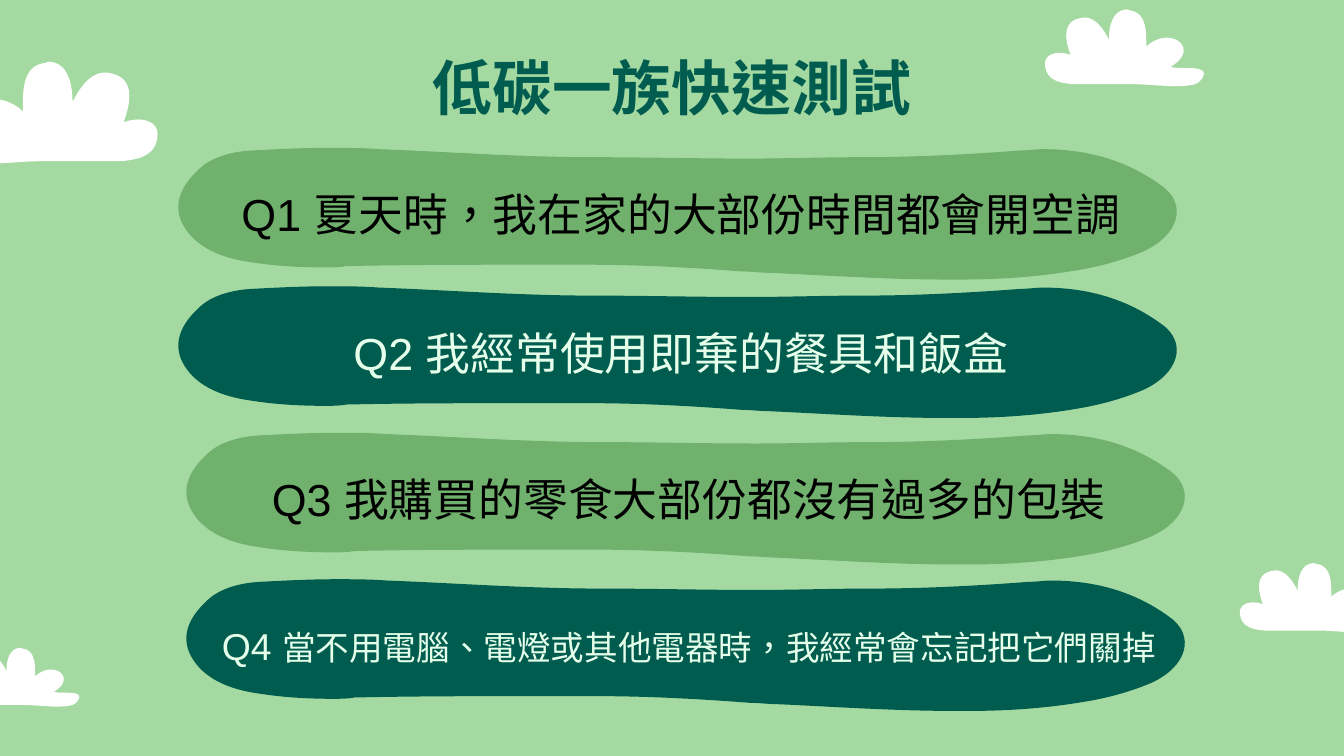
import pptx
import pptx.dml.color
import pptx.enum.lang
import pptx.enum.text
import pptx.oxml.ns
import pptx.util
import lxml.etree

MEADOW = pptx.dml.color.RGBColor(0xA4, 0xDA, 0xA1)
LEAF = pptx.dml.color.RGBColor(0x70, 0xB1, 0x6D)
FOREST = pptx.dml.color.RGBColor(0x00, 0x5C, 0x4F)
MINT = pptx.dml.color.RGBColor(0xE5, 0xFF, 0xEB)
WHITE = pptx.dml.color.RGBColor(0xFF, 0xFF, 0xFF)
BLACK = pptx.dml.color.RGBColor(0x00, 0x00, 0x00)

CLOUD_SIZE = (165, 76)
CLOUD_START = (83, 0)
CLOUD_CURVES = [
    (98, 0, 101, 18, 101, 30),
    (106, 20, 114, 8, 125, 8),
    (128, 8, 131, 9, 134, 10),
    (148, 16, 143, 34, 139, 45),
    (142, 44, 146, 43, 150, 43),
    (158, 43, 166, 47, 164, 57),
    (162, 71, 148, 73, 137, 74),
    (118, 74, 98, 74, 79, 74),
    (64, 74, 48, 76, 36, 76),
    (24, 76, 14, 75, 11, 71),
    (0, 59, 13, 58, 25, 58),
    (30, 58, 36, 58, 40, 57),
    (17, 43, 28, 28, 44, 28),
    (50, 28, 58, 31, 64, 37),
    (64, 24, 63, 3, 80, 1),
    (81, 0, 82, 0, 83, 0),
]

BAND_SIZE = (755, 98)
BAND_START = (115, 0)
BAND_CURVES = [
    (96, 0, 77, 1, 58, 2),
    (41, 3, 27, 8, 19, 16),
    (6, 28, 0, 41, 6, 55),
    (13, 70, 29, 81, 57, 85),
    (76, 88, 94, 89, 113, 89),
    (118, 89, 124, 89, 129, 88),
    (176, 87, 223, 87, 270, 87),
    (282, 87, 295, 87, 307, 87),
    (346, 87, 384, 89, 423, 92),
    (430, 92, 437, 93, 444, 93),
    (487, 95, 531, 98, 575, 98),
    (579, 98, 582, 98, 586, 98),
    (615, 98, 644, 96, 673, 91),
    (691, 88, 708, 83, 722, 77),
    (748, 65, 755, 42, 735, 28),
    (713, 12, 685, 1, 647, 1),
    (642, 1, 636, 2, 630, 2),
    (591, 5, 551, 7, 511, 7),
    (483, 7, 455, 8, 427, 8),
    (389, 8, 351, 7, 313, 7),
    (259, 7, 206, 3, 153, 1),
    (140, 0, 128, 0, 115, 0),
]

CLOUDS = [
    (-4.7, 4.6, 16.5, False),
    (92.2, 41.9, 11.2, True),
    (-3.2, 48.2, 9.5, True),
    (77.7, 0.7, 12.4, True),
]

QUESTIONS = [
    (12.9, 11.0, LEAF, BLACK, [("Q1 夏天時，我在家的大部份時間都會開空調", 24)]),
    (12.9, 21.3, FOREST, MINT, [("Q2 我經常使用即棄的餐具和飯盒", 24)]),
    (13.5, 32.2, LEAF, BLACK, [("Q3 我購買的零食大部份都沒有過多的包裝", 24)]),
    (13.5, 43.1, FOREST, MINT,
     [("Q4 ", 20), ("當不用電腦、電燈或其他電器時，我經常會忘記把它們關掉", 18)]),
]


def add_text(paragraph, text, *, size, color, font="Arial", east_asian=None, bold=False):
    """Append a formatted run to a paragraph."""
    run = paragraph.add_run()
    run.text = text
    run.font.name = font
    run.font.size = pptx.util.Pt(size)
    run.font.bold = bold
    run.font.color.rgb = color
    run.font.language_id = pptx.enum.lang.MSO_LANGUAGE_ID.TRADITIONAL_CHINESE
    if east_asian:
        properties = run._r.get_or_add_rPr()
        properties.find(pptx.oxml.ns.qn("a:latin")).addnext(
            properties.makeelement(pptx.oxml.ns.qn("a:ea"), {"typeface": east_asian}))


class QuizSlide:
    """Hold the style and the slide, measured on a grid of 100 square columns."""

    def __init__(self, presentation):
        self.cell = presentation.slide_width / 100
        self.slide = presentation.slides.add_slide(presentation.slide_layouts[5])
        self.slide.background.fill.solid()
        self.slide.background.fill.fore_color.rgb = MEADOW

    def length(self, cells):
        """Convert grid cells to a length."""
        return pptx.util.Emu(round(cells * self.cell))

    def paragraph(self, shape):
        """Return the centred paragraph of a shape's prepared text frame."""
        frame = shape.text_frame
        frame.word_wrap = True
        frame.vertical_anchor = pptx.enum.text.MSO_ANCHOR.MIDDLE
        inset = self.length(1)
        frame.margin_left = frame.margin_right = inset
        frame.margin_top = frame.margin_bottom = inset
        paragraph = frame.paragraphs[0]
        paragraph.alignment = pptx.enum.text.PP_ALIGN.CENTER
        return paragraph

    def title(self, text, left, top, width, height):
        """Place and format the title."""
        shape = self.slide.shapes.title
        shape.left, shape.top = self.length(left), self.length(top)
        shape.width, shape.height = self.length(width), self.length(height)
        paragraph = self.paragraph(shape)
        paragraph.line_spacing = 0.5
        add_text(paragraph, text, size=32, color=FOREST, bold=True,
                 font="Noto Sans CJK SC", east_asian="Noto Sans CJK SC")

    def curved(self, left, top, width, size, start, curves, color, mirrored=False):
        """Draw a filled outline of cubic curves."""
        columns, rows = size
        builder = self.slide.shapes.build_freeform(0, 0, self.length(width) / columns)
        builder.add_line_segments([(columns, 0), (columns, rows), (0, rows)])
        shape = builder.convert_to_shape(self.length(left), self.length(top))
        shape.shadow.inherit = False
        shape.fill.solid()
        shape.fill.fore_color.rgb = color
        shape.line.fill.background()
        outline = shape._element.find(".//" + pptx.oxml.ns.qn("a:path"))
        outline.clear()
        outline.set("w", str(columns))
        outline.set("h", str(rows))
        commands = [("a:moveTo", start)] + [("a:cubicBezTo", curve) for curve in curves]
        for name, numbers in commands:
            command = lxml.etree.SubElement(outline, pptx.oxml.ns.qn(name))
            for x, y in zip(numbers[::2], numbers[1::2]):
                x = columns - x if mirrored else x
                lxml.etree.SubElement(command, pptx.oxml.ns.qn("a:pt"), x=str(x), y=str(y))
        lxml.etree.SubElement(outline, pptx.oxml.ns.qn("a:close"))
        return shape

    def cloud(self, left, top, width, mirrored):
        """Draw a cloud."""
        self.curved(left, top, width, CLOUD_SIZE, CLOUD_START, CLOUD_CURVES, WHITE, mirrored)

    def question(self, left, top, fill, color, parts):
        """Draw a wavy band with a numbered question."""
        shape = self.curved(left, top, 75.5, BAND_SIZE, BAND_START, BAND_CURVES, fill)
        paragraph = self.paragraph(shape)
        for text, size in parts:
            add_text(paragraph, text, size=size, color=color)


def main():
    """Build and save the quiz slide."""
    presentation = pptx.Presentation()
    presentation.slide_width = pptx.util.Inches(10)
    presentation.slide_height = presentation.slide_width * 9 // 16
    quiz = QuizSlide(presentation)
    for cloud in CLOUDS:
        quiz.cloud(*cloud)
    quiz.title("低碳一族快速測試", 7.8, 3.7, 84.4, 7.4)
    for question in QUESTIONS:
        quiz.question(*question)
    presentation.save("out.pptx")


if __name__ == "__main__":
    main()
